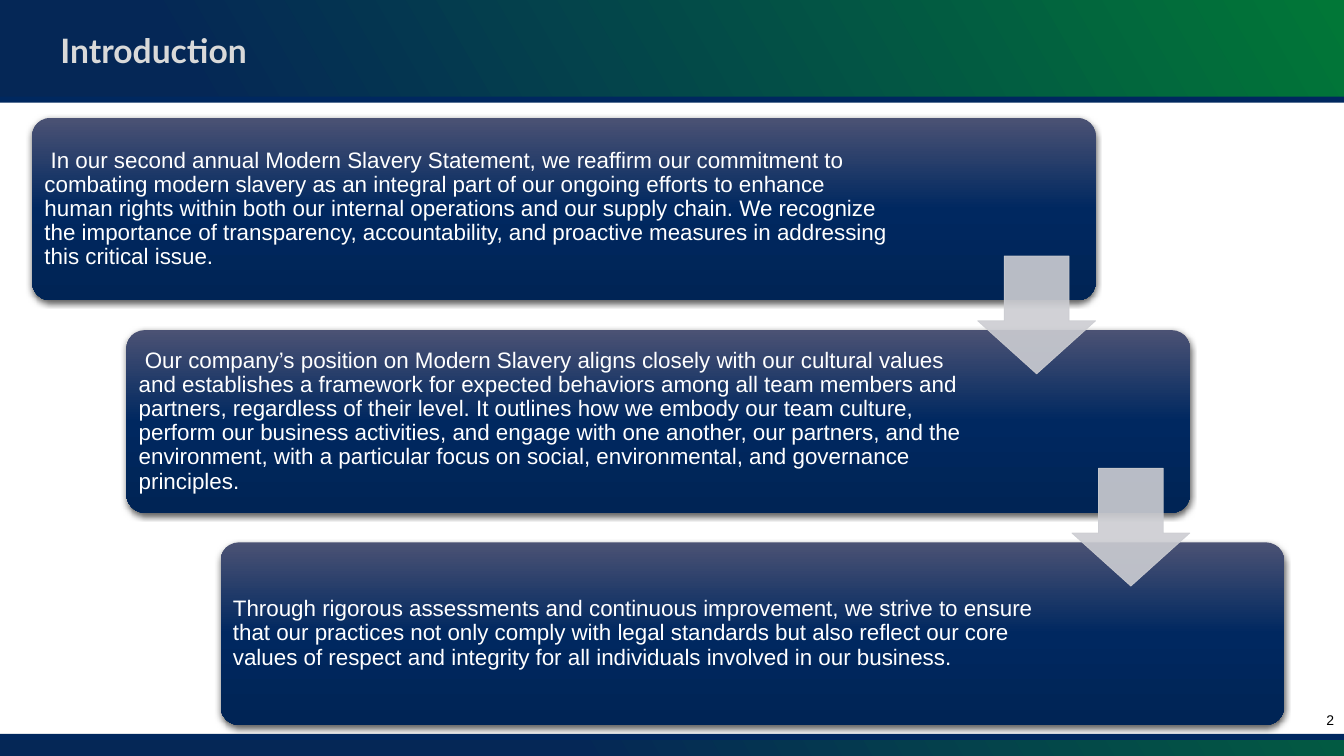
from lxml import etree
from pptx import Presentation
from pptx.dml.color import RGBColor
from pptx.enum import shapes, text
from pptx.oxml import ns
from pptx.util import Pt

# Content
TITLE = "Introduction"
NUMBER = "2"
STEPS = [  # text, text width
    (" In our second annual Modern Slavery Statement, we reaffirm our commitment to "
     "combating modern slavery as an integral part of our ongoing efforts to enhance "
     "human rights within both our internal operations and our supply chain. We "
     "recognize the importance of transparency, accountability, and proactive "
     "measures in addressing this critical issue.", 620),
    (" Our company’s position on Modern Slavery aligns closely with our cultural "
     "values and establishes a framework for expected behaviors among all team "
     "members and partners, regardless of their level. It outlines how we embody our "
     "team culture, perform our business activities, and engage with one another, our "
     "partners, and the environment, with a particular focus on social, "
     "environmental, and governance principles.", 600.5),
    ("Through rigorous assessments and continuous improvement, we strive to ensure "
     "that our practices not only comply with legal standards but also reflect our "
     "core values of respect and integrity for all individuals involved in our "
     "business.", 600.5),
]
COLORS = {"white": "FFFFFF", "black": "000000", "title": "D9D9D9", "navy": "00285F",
          "deep": "052756", "green": "017737", "arrow": "CCCDD2",
          "top": "4B5274", "mid": "002860", "base": "002455"}

# Layout
WIDE, HIGH = 960, 540
LEFT, TOP, CARD_W, CARD_H = 23, 84.2, 759.6, 130.4
STEP_X, STEP_Y = 67.3, 151.6
PAD, ARROW, DROP = 4, 84.2, 98.7

prs = Presentation()
prs.slide_width, prs.slide_height = Pt(WIDE), Pt(HIGH)
slide = prs.slides.add_slide(prs.slide_layouts[5])
KIND = shapes.MSO_SHAPE


def rgb(name):
    return RGBColor.from_string(COLORS[name])


def node(parent, tag, **attrs):
    return etree.SubElement(parent, ns.qn(tag), {k: str(v) for k, v in attrs.items()})


def block(kind, x, y, w, h, color=None):
    shape = slide.shapes.add_shape(kind, Pt(x), Pt(y), Pt(w), Pt(h))
    shape.shadow.inherit = False
    shape.line.fill.background()
    if color:
        shape.fill.solid()
        shape.fill.fore_color.rgb = rgb(color)
    return shape


def blend(shape, stops, angle):
    shape.fill.background()
    props = shape.element.spPr
    grad = etree.Element(ns.qn("a:gradFill"), rotWithShape="1")
    items = node(grad, "a:gsLst")
    for pos, name in stops:
        node(node(items, "a:gs", pos=pos * 1000), "a:srgbClr", val=COLORS[name])
    node(grad, "a:lin", ang=angle * 60000, scaled=0)
    props.replace(props.find(ns.qn("a:noFill")), grad)


def shade(shape):
    effects = shape.element.spPr.find(ns.qn("a:effectLst"))
    outer = node(effects, "a:outerShdw", blurRad=Pt(4.5), dist=Pt(1.5),
                 dir=90 * 60000, algn="ctr", rotWithShape=0)
    node(node(outer, "a:srgbClr", val=COLORS["black"]), "a:alpha", val=63000)


def write(shape, words, size, face, color, inset=None):
    frame = shape.text_frame
    frame.word_wrap = True
    frame.auto_size = text.MSO_AUTO_SIZE.NONE
    frame.vertical_anchor = text.MSO_ANCHOR.MIDDLE
    if inset is not None:
        frame.margin_left = frame.margin_right = Pt(inset)
        frame.margin_top = frame.margin_bottom = Pt(inset)
    para = frame.paragraphs[0]
    para.text = words
    para.alignment = text.PP_ALIGN.LEFT
    para.line_spacing = 0.9
    para.font.size, para.font.name = Pt(size), face
    para.font.color.rgb = rgb(color)
    return para


# Background bands
back = block(KIND.RECTANGLE, 0, 0, WIDE, HIGH)
blend(back, [(32, "deep"), (100, "green")], 330)
block(KIND.RECTANGLE, 0, 71.3, WIDE, 454.3, "white")
for y in (69.1, 524.2):
    block(KIND.RECTANGLE, 0, y, WIDE, 4.3, "navy")

# Title, moved above the bands
head = slide.shapes.title
head.left, head.top, head.width, head.height = Pt(36), Pt(7.2), Pt(782), Pt(60.5)
write(head, TITLE, 24, "Lato", "title").font.bold = True
slide.shapes._spTree.append(head.element)

# Slide number
page = slide.shapes.add_textbox(Pt(933), Pt(504.7), Pt(27), Pt(19.4))
mark = write(page, NUMBER, 10, "Arial", "black")
mark.alignment = text.PP_ALIGN.RIGHT
mark.line_spacing = 1
page.text_frame.word_wrap = False

# Cards, each one step right and down
spots = [(LEFT + i * STEP_X, TOP + i * STEP_Y) for i in range(len(STEPS))]
for (x, y), (words, width) in zip(spots, STEPS):
    card = block(KIND.ROUNDED_RECTANGLE, x, y, CARD_W, CARD_H)
    card.adjustments[0] = 0.1
    blend(card, [(0, "top"), (50, "mid"), (100, "base")], 90)
    shade(card)
    label = slide.shapes.add_textbox(Pt(x + PAD), Pt(y + PAD), Pt(width),
                                     Pt(CARD_H - 2 * PAD))
    write(label, words, 16, "Arial", "white", 4.8)

# Arrows, flush with the right edge of the card they leave
for x, y in spots[:-1]:
    arrow = block(KIND.DOWN_ARROW, x + CARD_W - ARROW, y + DROP, ARROW, ARROW, "arrow")
    arrow.adjustments[0], arrow.adjustments[1] = 0.55, 0.45
    arrow.line.color.rgb = rgb("arrow")
    arrow.line.width = Pt(0.5)
    for tint in arrow.element.spPr.iter(ns.qn("a:srgbClr")):
        node(tint, "a:alpha", val=90000)

prs.save("out.pptx")
